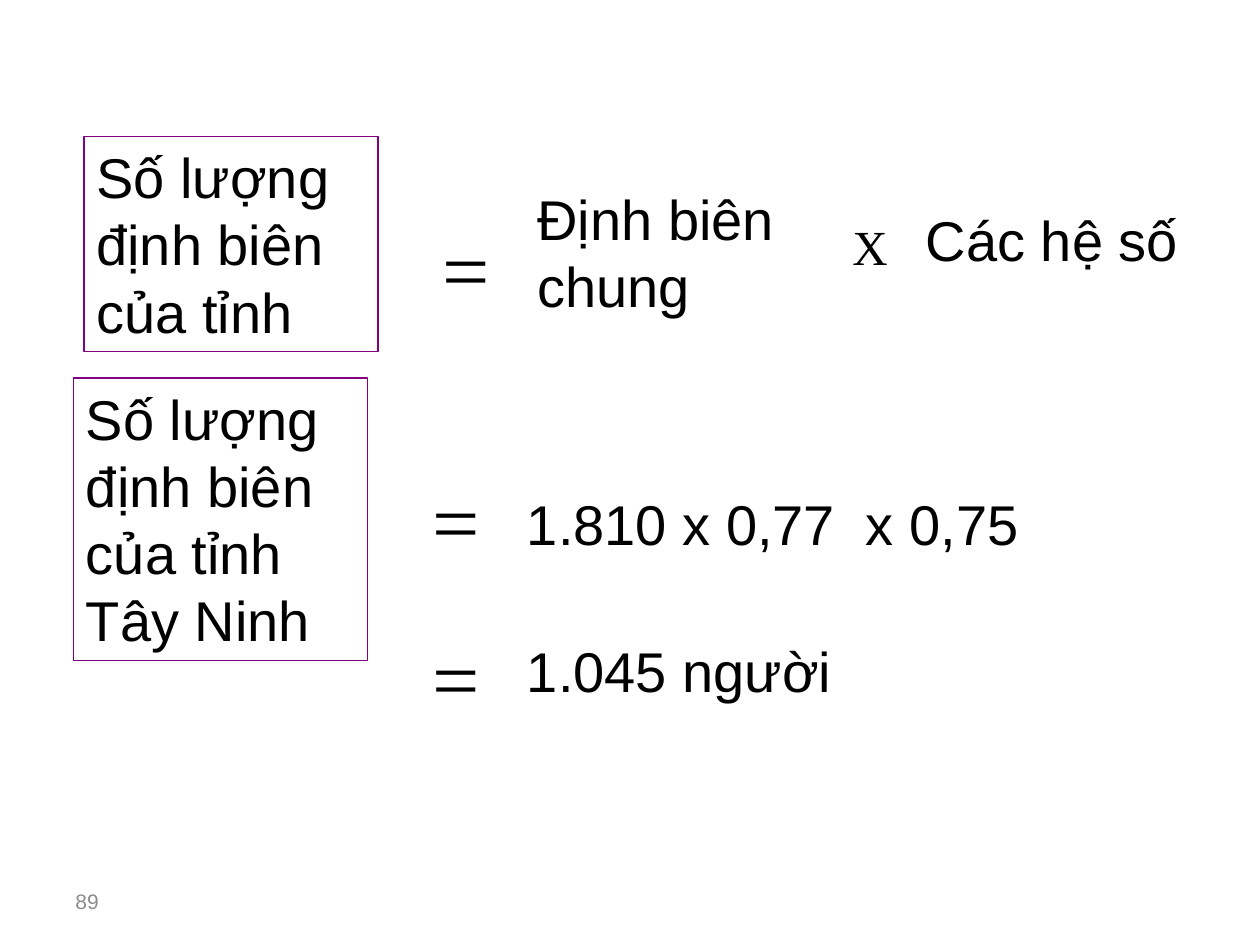
from pptx import Presentation
from pptx.dml.color import RGBColor
from pptx.enum.shapes import MSO_SHAPE
from pptx.enum.text import MSO_ANCHOR, MSO_AUTO_SIZE, PP_ALIGN
from pptx.util import Pt

PX = 7620
BLACK = RGBColor(0x00, 0x00, 0x00)
GREY = RGBColor(0x8C, 0x8C, 0x8C)
PURPLE = RGBColor(0x80, 0x00, 0x80)

FORMATS = {
    "term": {"name": "Arial", "size": Pt(32)},
    "equals": {"name": "Times New Roman", "size": Pt(48)},
    "times": {"name": "Times New Roman", "size": Pt(28)},
    "number": {"name": "Arial", "size": Pt(12)},
}

deck = Presentation()
deck.slide_width = 1200 * PX
deck.slide_height = 900 * PX
slide = deck.slides.add_slide(deck.slide_layouts[6])


def write(holder, text, style, color=BLACK):
    frame = holder.text_frame
    frame.word_wrap = True
    frame.vertical_anchor = MSO_ANCHOR.TOP
    frame.auto_size = MSO_AUTO_SIZE.SHAPE_TO_FIT_TEXT
    paragraph = frame.paragraphs[0]
    paragraph.alignment = PP_ALIGN.LEFT
    run = paragraph.add_run()
    run.text = text
    for attribute, value in FORMATS[style].items():
        setattr(run.font, attribute, value)
    run.font.color.rgb = color


quotas = [
    ("Số lượng định biên của tỉnh", 80, 130, 205),
    ("Số lượng định biên của tỉnh Tây Ninh", 70, 360, 269),
]
for text, left, top, height in quotas:
    quota = slide.shapes.add_shape(
        MSO_SHAPE.RECTANGLE, left * PX, top * PX, 280 * PX, height * PX
    )
    quota.shadow.inherit = False
    quota.fill.background()
    quota.line.color.rgb = PURPLE
    quota.line.width = Pt(0.75)
    write(quota, text, "term")

formula = [
    ("=", "equals", 410, 200, 110, 108),
    ("Định biên chung", "term", 500, 170, 280, 140),
    ("Các hệ số", "term", 870, 190, 280, 76),
    ("X", "times", 800, 200, 110, 68),
    ("=", "equals", 400, 440, 110, 108),
    ("1.810 x 0,77  x 0,75", "term", 490, 460, 640, 76),
    ("=", "equals", 400, 590, 110, 108),
    ("1.045 người", "term", 490, 600, 640, 76),
]
for text, style, left, top, width, height in formula:
    part = slide.shapes.add_textbox(left * PX, top * PX, width * PX, height * PX)
    write(part, text, style)

page_number = slide.shapes.add_textbox(60 * PX, 834 * PX, 280 * PX, 48 * PX)
write(page_number, "89", "number", GREY)
page_number.text_frame.auto_size = MSO_AUTO_SIZE.NONE
page_number.text_frame.vertical_anchor = MSO_ANCHOR.MIDDLE

deck.save("out.pptx")
